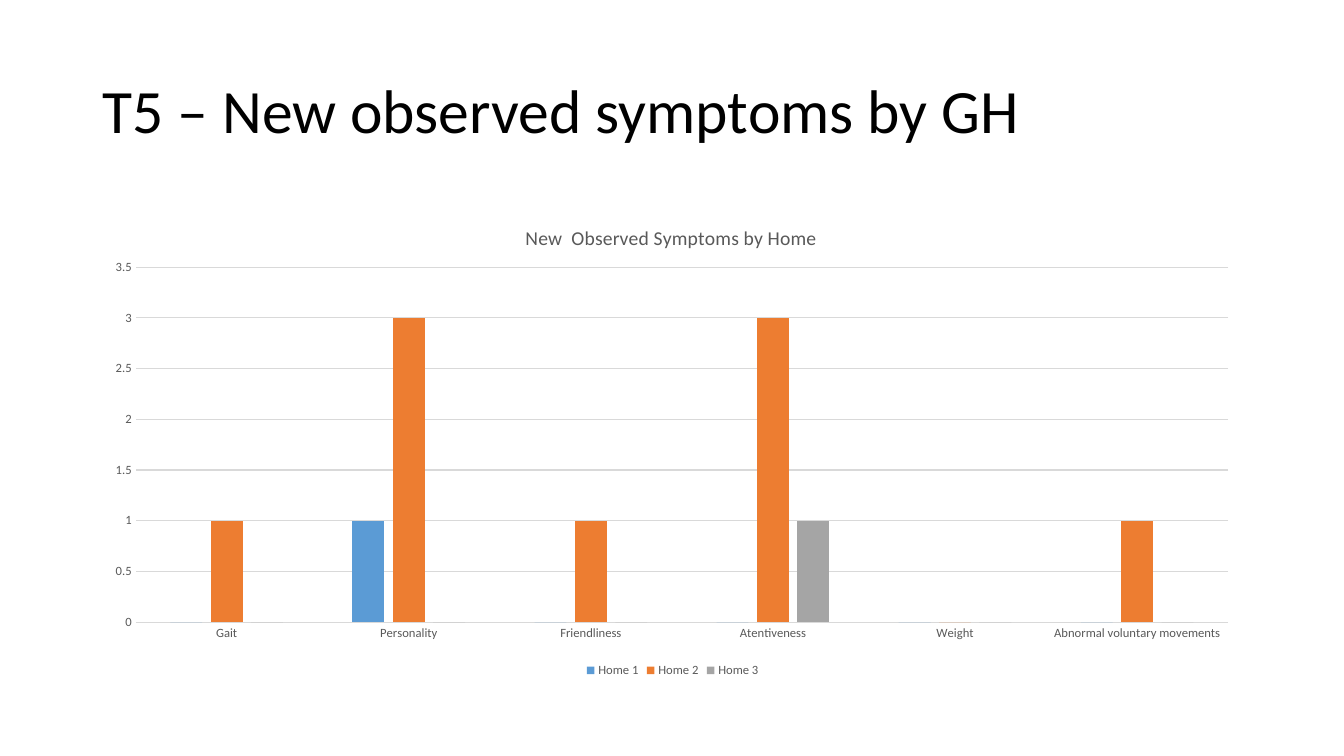
from dataclasses import dataclass

from pptx import Presentation
from pptx import util as u
from pptx.chart.data import CategoryChartData
from pptx.dml.color import RGBColor
from pptx.enum import chart as charts, text
from pptx.oxml import parse_xml
from pptx.oxml.ns import nsdecls

WIDTH, HEIGHT = u.Inches(13.33), u.Inches(7.5)


@dataclass(frozen=True)
class Theme:
    font: str = "Calibri"
    ink: str = "000000"
    muted: str = "595959"
    grid: str = "D9D9D9"
    homes: tuple = ("5B9BD5", "ED7D31", "A5A5A5")
    heading: int = 44
    chart_title: int = 14
    label: int = 9


THEME = Theme()
SYMPTOMS = ["Gait", "Personality", "Friendliness", "Atentiveness", "Weight",
            "Abnormal voluntary movements"]
COUNTS = {
    "Home 1": (0, 1, 0, 0, 0, 0),
    "Home 2": (1, 3, 1, 3, 0, 1),
    "Home 3": (0, 0, 0, 1, 0, 0),
}


def area(left, top, width, height):
    """Turn shares of the slide's size into lengths."""
    return (int(left * WIDTH), int(top * HEIGHT),
            int(width * WIDTH), int(height * HEIGHT))


def set_format(target, values):
    for name, value in values.items():
        setattr(target, name, value)


def set_font(font, size, color):
    set_format(font, {"name": THEME.font, "size": u.Pt(size), "bold": False})
    font.color.rgb = RGBColor.from_string(color)


def set_line(line, color):
    line.color.rgb = RGBColor.from_string(color)
    line.width = u.Pt(0.75)


def manual_layout(inner=False, **shares):
    """Build a chart layout from shares of the chart's size."""
    target = '<c:layoutTarget val="inner"/>' if inner else ""
    modes = "".join(f'<c:{key}Mode val="edge"/>' for key in "xy")
    sizes = "".join(f'<c:{key} val="{value}"/>' for key, value in shares.items())
    return parse_xml(f'<c:layout {nsdecls("c")}><c:manualLayout>'
                     f'{target}{modes}{sizes}</c:manualLayout></c:layout>')


def add_heading(slide, words, place):
    frame = slide.shapes.add_textbox(*place).text_frame
    set_format(frame, {"word_wrap": True,
                       "vertical_anchor": text.MSO_ANCHOR.MIDDLE})
    paragraph = frame.paragraphs[0]
    paragraph.line_spacing = 0.9
    run = paragraph.add_run()
    run.text = words
    set_font(run.font, THEME.heading, THEME.ink)


def add_chart_title(chart, words):
    title = chart.chart_title
    title.text_frame.text = words
    set_font(title.text_frame.paragraphs[0].runs[0].font,
             THEME.chart_title, THEME.muted)
    title.include_in_layout = False
    for layout in title._element.findall("{*}layout"):
        title._element.remove(layout)
    title._element.find("{*}tx").addnext(manual_layout(x=0.37, y=0.04))


def style_axes(chart):
    for axis in (chart.category_axis, chart.value_axis):
        set_format(axis, {"major_tick_mark": charts.XL_TICK_MARK.NONE,
                          "minor_tick_mark": charts.XL_TICK_MARK.NONE})
        set_font(axis.tick_labels.font, THEME.label, THEME.muted)
    set_line(chart.category_axis.format.line, THEME.grid)
    values = chart.value_axis
    set_format(values, {"minimum_scale": 0, "maximum_scale": 3.5,
                        "major_unit": 0.5, "has_major_gridlines": True})
    values.format.line.fill.background()
    set_line(values.major_gridlines.format.line, THEME.grid)


def add_column_chart(slide, title, place):
    data = CategoryChartData()
    data.categories = SYMPTOMS
    for home, counts in COUNTS.items():
        data.add_series(home, counts)
    chart = slide.shapes.add_chart(
        charts.XL_CHART_TYPE.COLUMN_CLUSTERED, *place, data).chart
    set_font(chart.font, 10, THEME.ink)
    add_chart_title(chart, title)
    style_axes(chart)

    plot = chart.plots[0]
    set_format(plot, {"gap_width": 219, "overlap": -27,
                      "vary_by_categories": False})
    for series, color in zip(plot.series, THEME.homes):
        series.format.fill.solid()
        series.format.fill.fore_color.rgb = RGBColor.from_string(color)

    chart.has_legend = True
    set_format(chart.legend, {"position": charts.XL_LEGEND_POSITION.BOTTOM,
                              "include_in_layout": False})
    set_font(chart.legend.font, THEME.label, THEME.muted)

    plot_area = chart._chartSpace.chart.plotArea
    for layout in plot_area.findall("{*}layout"):
        plot_area.remove(layout)
    plot_area.insert(0, manual_layout(inner=True, x=0.037, y=0.136,
                                      w=0.942, h=0.74))


def main():
    presentation = Presentation()
    set_format(presentation, {"slide_width": WIDTH, "slide_height": HEIGHT})
    slide = presentation.slides.add_slide(presentation.slide_layouts[6])
    add_heading(slide, "T5 – New observed symptoms by GH",
                area(0.069, 0.053, 0.863, 0.193))
    add_column_chart(slide, "New  Observed Symptoms by Home",
                     area(0.069, 0.267, 0.863, 0.635))
    presentation.save("out.pptx")


if __name__ == "__main__":
    main()
